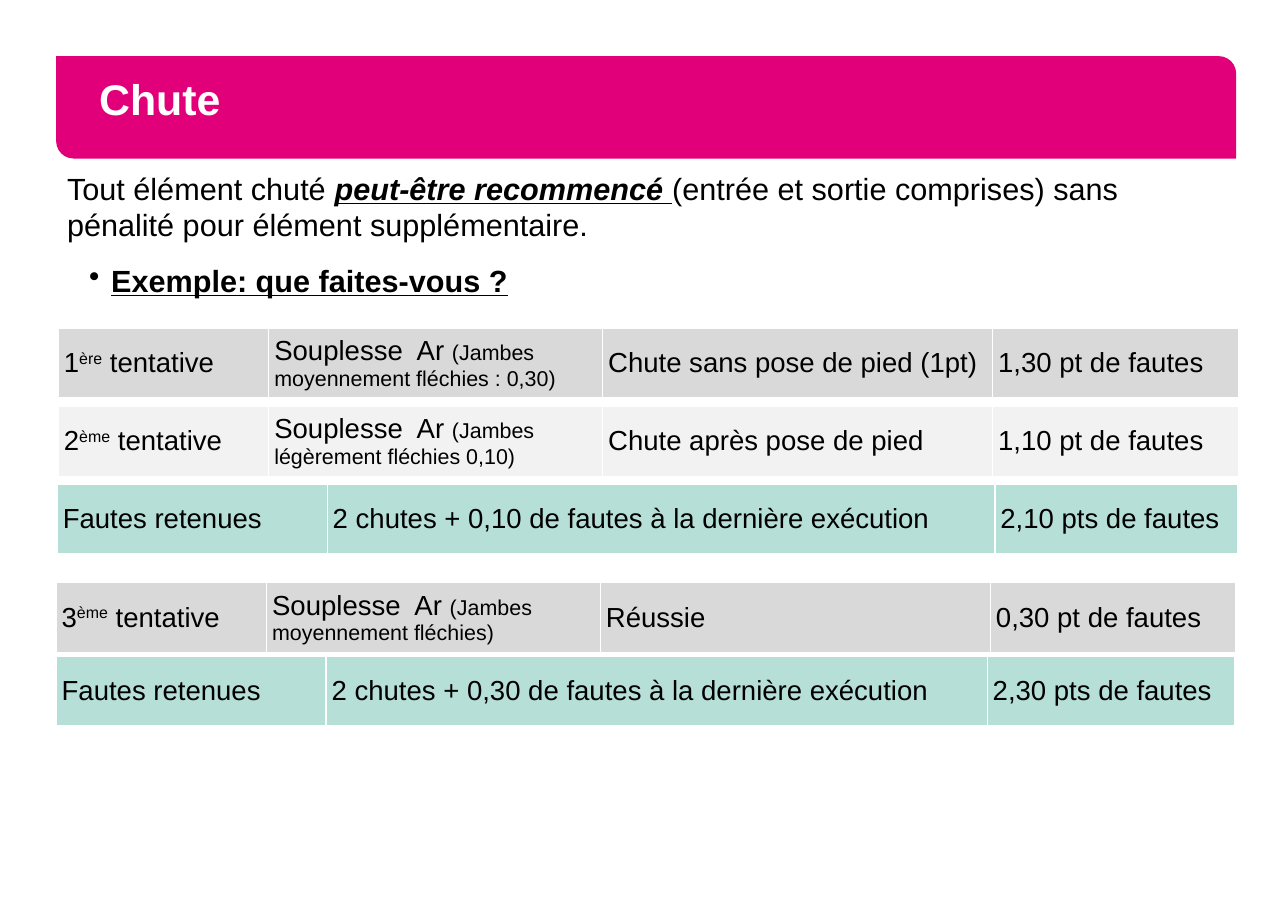
from lxml.etree import SubElement
from pptx import Presentation
from pptx.dml.color import RGBColor
from pptx.enum.shapes import MSO_SHAPE as Shape
from pptx.enum.text import MSO_ANCHOR as Anchor, PP_ALIGN as Align
from pptx.oxml.ns import qn
from pptx.util import Inches, Pt

PINK = RGBColor(0xE2, 0x00, 0x7A)
WHITE = RGBColor(0xFF, 0xFF, 0xFF)
BLACK = RGBColor(0x00, 0x00, 0x00)
GREY = RGBColor(0xD9, 0xD9, 0xD9)
PALE_GREY = RGBColor(0xF2, 0xF2, 0xF2)
MINT = RGBColor(0xB6, 0xDF, 0xD7)

LEFT, WIDTH = 0.51, 10.71
ATTEMPT_COLUMNS = (1.91, 3.03, 3.54, 2.23)


def set_font(font, size, color=BLACK):
    font.name = "Arial"
    font.size = Pt(size)
    font.color.rgb = color


def add_title(slide, text):
    frame = (Inches(LEFT), Inches(0.51), Inches(WIDTH), Inches(0.93))
    title = slide.shapes.title
    title.left, title.top, title.width, title.height = frame

    # Band behind the title, rounded at top right and bottom left
    band = slide.shapes.add_shape(Shape.ROUND_2_DIAG_RECTANGLE, *frame)
    band.adjustments[0], band.adjustments[1] = 0, 0.17
    band.shadow.inherit = False
    band.fill.solid()
    band.fill.fore_color.rgb = PINK
    band.line.fill.background()
    title.element.addprevious(band.element)

    title_text = title.text_frame
    title_text.text = text
    title_text.vertical_anchor = Anchor.MIDDLE
    title_text.margin_left = title_text.margin_right = Inches(0.39)
    heading = title_text.paragraphs[0]
    heading.alignment = Align.LEFT
    heading.line_spacing = Pt(22)
    set_font(heading.font, 28, WHITE)
    heading.font.bold = True


def add_rule(slide):
    box = slide.shapes.add_textbox(Inches(LEFT), Inches(1.49), Inches(WIDTH), Inches(1.4))
    box.text_frame.word_wrap = True

    rule = box.text_frame.paragraphs[0]
    rule.space_after = Pt(6)
    set_font(rule.font, 20)
    rule.add_run().text = "Tout élément chuté "
    emphasis = rule.add_run()
    emphasis.text = "peut-être recommencé "
    emphasis.font.bold = emphasis.font.italic = emphasis.font.underline = True
    rule.add_run().text = "(entrée et sortie comprises) sans pénalité pour élément supplémentaire."

    example = box.text_frame.add_paragraph()
    example.text = "Exemple: que faites-vous ?"
    example.space_before = example.space_after = Pt(6)
    properties = example._p.get_or_add_pPr()
    properties.set("marL", str(Inches(0.4)))
    properties.set("indent", str(Inches(-0.2)))
    SubElement(properties, qn("a:buChar"), char="•")
    set_font(example.font, 20)
    example.font.bold = example.font.underline = True


def add_borders(cell):
    properties = cell._tc.get_or_add_tcPr()
    for side in ("lnL", "lnR", "lnT", "lnB"):
        border = SubElement(properties, qn(f"a:{side}"), w=str(Pt(1)))
        fill = SubElement(border, qn("a:solidFill"))
        SubElement(fill, qn("a:srgbClr"), val=str(WHITE))


def fill_cell(cell, parts, color):
    """Write (text, style) parts, where style is None, "super" or "small"."""
    add_borders(cell)
    cell.fill.solid()
    cell.fill.fore_color.rgb = color
    cell.vertical_anchor = Anchor.MIDDLE
    cell.margin_left = cell.margin_right = Inches(0.05)
    cell.margin_top = cell.margin_bottom = Inches(0.05)
    paragraph = cell.text_frame.paragraphs[0]
    set_font(paragraph.font, 18)
    for text, style in parts:
        run = paragraph.add_run()
        run.text = text
        if style == "super":
            run._r.get_or_add_rPr().set("baseline", "30000")
        elif style == "small":
            run.font.size = Pt(14)


def add_row(slide, left, top, height, columns, color, cells):
    table = slide.shapes.add_table(1, len(columns), Inches(left), Inches(top),
                                   Inches(WIDTH), Inches(height)).table
    table.first_row = table.horz_banding = False
    for column, width in zip(table.columns, columns):
        column.width = Inches(width)
    for cell, parts in zip(table.rows[0].cells, cells):
        fill_cell(cell, parts, color)


def add_attempt(slide, left, top, height, color, number, suffix, legs, outcome, faults):
    add_row(slide, left, top, height, ATTEMPT_COLUMNS, color, [
        [(number, None), (suffix, "super"), (" tentative", None)],
        [("Souplesse  Ar ", None), (legs, "small")],
        [(outcome, None)],
        [(faults, None)],
    ])


def add_result(slide, left, top, columns, reason, faults):
    texts = ("Fautes retenues", reason, faults)
    add_row(slide, left, top, 0.63, columns, MINT, [[(text, None)] for text in texts])


def main():
    deck = Presentation()
    deck.slide_width, deck.slide_height = Inches(11.69), Inches(8.27)
    slide = deck.slides.add_slide(deck.slide_layouts[5])

    add_title(slide, "Chute")
    add_rule(slide)

    # First two attempts and their result
    add_attempt(slide, 0.53, 2.98, 0.59, GREY, "1", "ère",
                "(Jambes moyennement fléchies : 0,30)",
                "Chute sans pose de pied (1pt)", "1,30 pt de fautes")
    add_attempt(slide, 0.53, 3.69, 0.59, PALE_GREY, "2", "ème",
                "(Jambes légèrement fléchies 0,10)",
                "Chute après pose de pied", "1,10 pt de fautes")
    add_result(slide, 0.52, 4.4, (2.45, 6.06, 2.2),
               "2 chutes + 0,10 de fautes à la dernière exécution", "2,10 pts de fautes")

    # Third attempt and its result
    add_attempt(slide, 0.51, 5.29, 0.63, GREY, "3", "ème",
                "(Jambes moyennement fléchies)", "Réussie", "0,30 pt de fautes")
    add_result(slide, 0.51, 5.96, (2.45, 6, 2.25),
               "2 chutes + 0,30 de fautes à la dernière exécution", "2,30 pts de fautes")

    deck.save("out.pptx")


if __name__ == "__main__":
    main()
